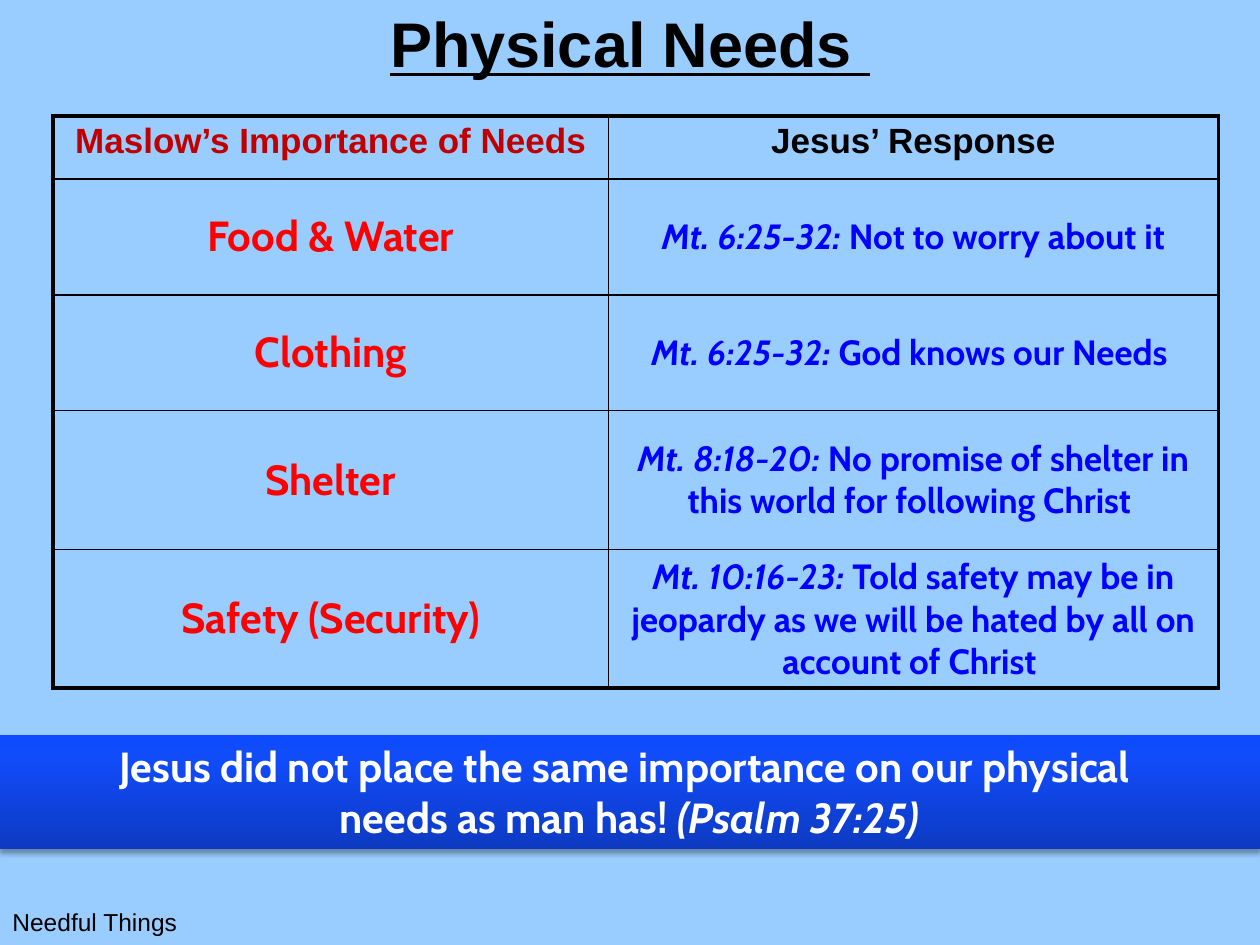
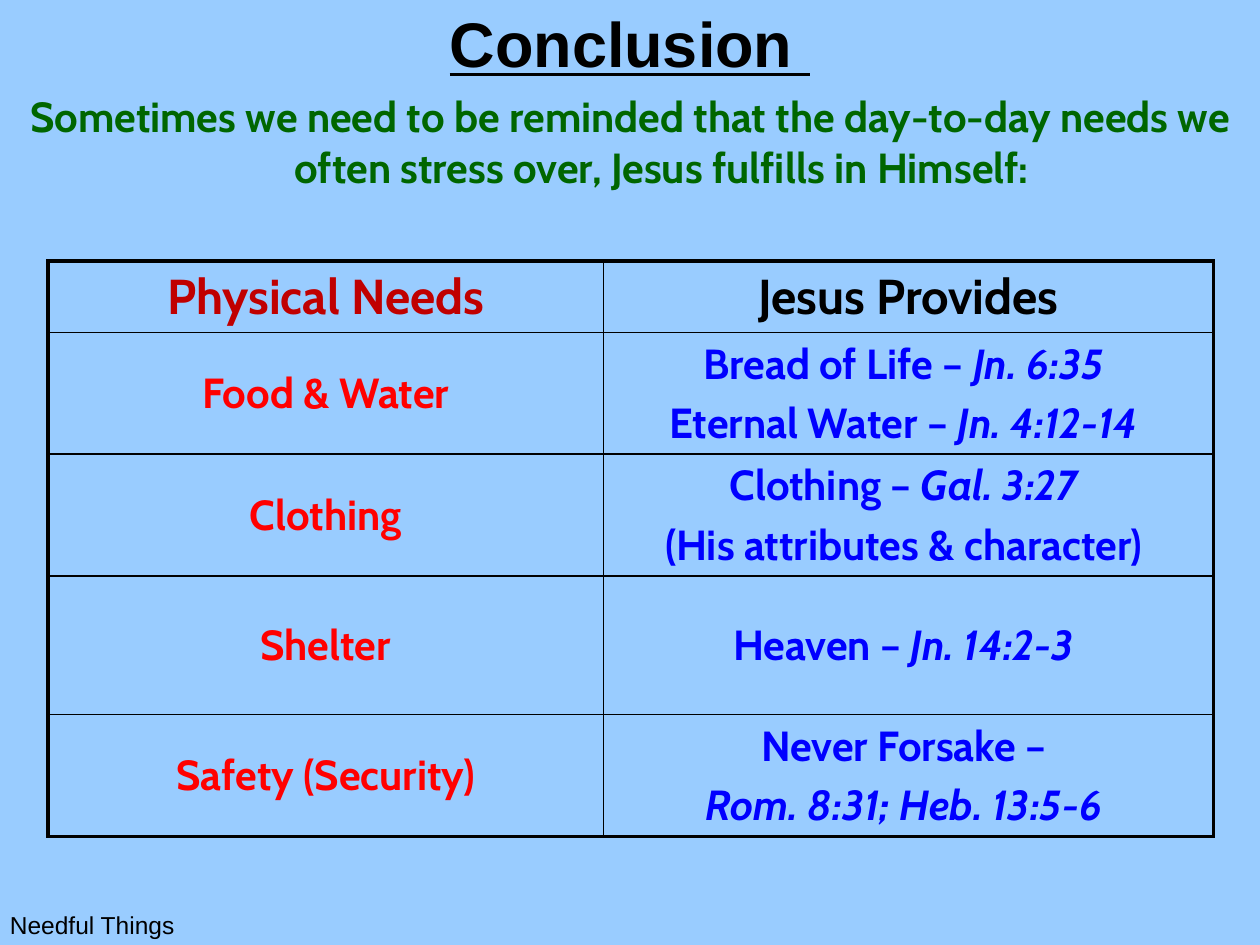
import dataclasses

import lxml.etree
import pptx
import pptx.dml.color
import pptx.enum.shapes
import pptx.enum.text
import pptx.oxml
import pptx.oxml.ns
import pptx.util

ALIGN = pptx.enum.text.PP_ALIGN
ANCHOR = pptx.enum.text.MSO_ANCHOR
GRID_COLUMNS, GRID_ROWS = 100, 75
TITLE_ONLY_LAYOUT = 5


@dataclasses.dataclass(frozen=True)
class Theme:
    plain_font: str = "Arial"
    accent_font: str = "Cabin"
    background: str = "99CCFF"
    ink: str = "000000"
    heading: str = "C00000"
    need: str = "FF0000"
    answer: str = "0000FF"
    lead: str = "006600"
    light: str = "FFFFFF"
    band_stops: tuple = ((0, "0D3AC1"), (80, "114CFB"), (100, "0E4BFF"))
    title_size: int = 36
    large_size: int = 28
    body_size: int = 24
    small_size: int = 20
    footer_size: int = 14
    outer_line: float = 2.25
    inner_line: float = 1
    paragraph_gap: float = 0.2


def color(value):
    return pptx.dml.color.RGBColor.from_string(value)


def apply(target, values):
    for name, value in values.items():
        setattr(target, name, value)


def add_xml(parent, tag, **attributes):
    child = lxml.etree.SubElement(parent, pptx.oxml.ns.qn(tag))
    for name, value in attributes.items():
        child.set(name, str(value))
    return child


class SlideBuilder:
    def __init__(self, deck, theme):
        self.deck = deck
        self.theme = theme
        self.page = None
        fill = deck.slide_master.background.fill
        fill.solid()
        fill.fore_color.rgb = color(theme.background)

    def across(self, columns):
        return round(self.deck.slide_width * columns / GRID_COLUMNS)

    def down(self, rows):
        return round(self.deck.slide_height * rows / GRID_ROWS)

    def place(self, left, top, width, height):
        return self.across(left), self.down(top), self.across(width), self.down(height)

    def style(self, size, ink, font=None, bold=True, underline=None):
        return {"size": pptx.util.Pt(size), "name": font or self.theme.accent_font,
                "bold": bold, "underline": underline, "ink": ink}

    def set_text(self, frame, text, style, align=ALIGN.CENTER, hanging=0, gap=0):
        frame.word_wrap = True
        for index, line in enumerate(text.split("\n")):
            para = frame.paragraphs[0] if index == 0 else frame.add_paragraph()
            para.alignment = align
            if index and gap:
                para.space_before = pptx.util.Pt(round(style["size"].pt * gap, 2))
            if hanging:
                properties = para._p.get_or_add_pPr()
                properties.set("marL", str(self.across(hanging)))
                properties.set("indent", str(-self.across(hanging)))
            for part, words in enumerate(line.split("*")):
                if words:
                    span = para.add_run()
                    span.text = words
                    values = dict(style, italic=part % 2 == 1)
                    span.font.color.rgb = color(values.pop("ink"))
                    apply(span.font, values)

    def start(self, title, footer_at):
        theme = self.theme
        self.page = self.deck.slides.add_slide(self.deck.slide_layouts[TITLE_ONLY_LAYOUT])
        box = self.page.shapes.title
        apply(box, dict(zip(("left", "top", "width", "height"), self.place(0, 0, 100, 6.7))))
        apply(box.text_frame, {"auto_size": pptx.enum.text.MSO_AUTO_SIZE.NONE,
                               "vertical_anchor": ANCHOR.MIDDLE})
        self.set_text(box.text_frame, title,
                      self.style(theme.title_size, theme.ink, theme.plain_font, underline=True))
        self.text("Needful Things", footer_at,
                  self.style(theme.footer_size, theme.ink, theme.plain_font, bold=False),
                  align=ALIGN.LEFT)

    def text(self, text, at, style, **layout):
        box = self.page.shapes.add_textbox(*self.place(*at))
        self.set_text(box.text_frame, text, style, **layout)

    def band(self, text, at):
        theme = self.theme
        box = self.page.shapes.add_shape(
            pptx.enum.shapes.MSO_SHAPE.RECTANGLE, *self.place(*at))
        box.line.fill.background()
        box.fill.gradient()
        box.fill.gradient_angle = 90
        stops = box.element.find(".//" + pptx.oxml.ns.qn("a:gsLst"))
        for stop in list(stops):
            stops.remove(stop)
        for position, value in theme.band_stops:
            stop = add_xml(stops, "a:gs", pos=position * 1000)
            add_xml(stop, "a:srgbClr", val=value)
        box.shadow.inherit = False
        effects = box.element.find(".//" + pptx.oxml.ns.qn("a:effectLst"))
        shadow = add_xml(effects, "a:outerShdw", blurRad=pptx.util.Pt(3.1),
                         dist=pptx.util.Pt(1.8), dir=5400000, rotWithShape=0)
        add_xml(add_xml(shadow, "a:srgbClr", val=theme.ink), "a:alpha", val=35000)
        box.text_frame.vertical_anchor = ANCHOR.TOP
        self.set_text(box.text_frame, text, self.style(theme.body_size, theme.light), hanging=5)

    def border(self, cell, outer_sides):
        properties = cell._tc.get_or_add_tcPr()
        for side in "LRTB":
            width = self.theme.outer_line if side in outer_sides else self.theme.inner_line
            line = add_xml(properties, f"a:ln{side}", w=pptx.util.Pt(width))
            add_xml(add_xml(line, "a:solidFill"), "a:srgbClr", val=self.theme.ink)

    def table(self, rows, at, widths, heights, header_styles, body_styles):
        grid = self.page.shapes.add_table(len(rows), len(widths), *self.place(*at)).table
        apply(grid, {"first_row": False, "horz_banding": False})
        for column, width in zip(grid.columns, widths):
            column.width = self.across(width)
        for row, height in zip(grid.rows, heights):
            row.height = self.down(height)
        for r, row in enumerate(rows):
            styles = body_styles if r else header_styles
            for c, (words, style) in enumerate(zip(row, styles)):
                cell = grid.cell(r, c)
                edges = {"L": c == 0, "R": c == len(row) - 1,
                         "T": r == 0, "B": r == len(rows) - 1}
                self.border(cell, [side for side, outer in edges.items() if outer])
                cell.fill.background()
                cell.vertical_anchor = ANCHOR.MIDDLE if r else ANCHOR.TOP
                self.set_text(cell.text_frame, words, style, gap=self.theme.paragraph_gap)


NEEDS = ("Food & Water", "Clothing", "Shelter", "Safety (Security)")
RESPONSES = (
    "*Mt. 6:25-32:* Not to worry about it",
    "*Mt. 6:25-32:* God knows our Needs ",
    "*Mt. 8:18-20:* No promise of shelter in this world for following Christ ",
    "*Mt. 10:16-23:* Told safety may be in jeopardy as we will be hated by all "
    "on account of Christ ",
)
PROVISIONS = (
    "Bread of Life – *Jn. 6:35 *\nEternal Water – *Jn. 4:12-14 *",
    "Clothing – *Gal. 3:27 *\n(His attributes & character) ",
    "Heaven – *Jn. 14:2-3 *",
    "Never Forsake – \n*Rom. 8:31; Heb. 13:5-6 *",
)
COLUMN_WIDTHS = (44.1, 48.4)
ROW_HEIGHTS = (5, 9.2, 9.2, 11, 9.5)


def main():
    deck = pptx.Presentation()
    deck.slide_width = pptx.util.Inches(10)
    deck.slide_height = pptx.util.Inches(7.5)
    theme = Theme()
    builder = SlideBuilder(deck, theme)
    need = builder.style(theme.body_size, theme.need)

    builder.start("Physical Needs ", (0, 71.5, 31.7, 3.5))
    builder.table(
        [("Maslow’s Importance of Needs", "Jesus’ Response"), *zip(NEEDS, RESPONSES)],
        (4.2, 9.2, 92.5, 45.3), COLUMN_WIDTHS, ROW_HEIGHTS,
        [builder.style(theme.small_size, ink, theme.plain_font)
         for ink in (theme.heading, theme.ink)],
        [need, builder.style(theme.small_size, theme.answer)])
    builder.band("Jesus did not place the same importance on our physical \n"
                 "needs as man has! *(Psalm 37:25)*", (-0.1, 58.3, 100.1, 9.1))

    builder.start("Conclusion ", (-0.2, 71.7, 31.7, 3.8))
    builder.table(
        [("Physical Needs", "Jesus Provides"), *zip(NEEDS, PROVISIONS)],
        (3.8, 20.7, 92.5, 46.1), COLUMN_WIDTHS, ROW_HEIGHTS,
        [builder.style(theme.large_size, ink) for ink in (theme.heading, theme.ink)],
        [need, builder.style(theme.body_size, theme.answer)])
    builder.text("Sometimes we need to be reminded that the day-to-day needs we often "
                 "stress over, Jesus fulfills in Himself:", (0, 6.7, 100, 9.1),
                 builder.style(theme.body_size, theme.lead), hanging=5)
    deck.save("out.pptx")


if __name__ == "__main__":
    main()
